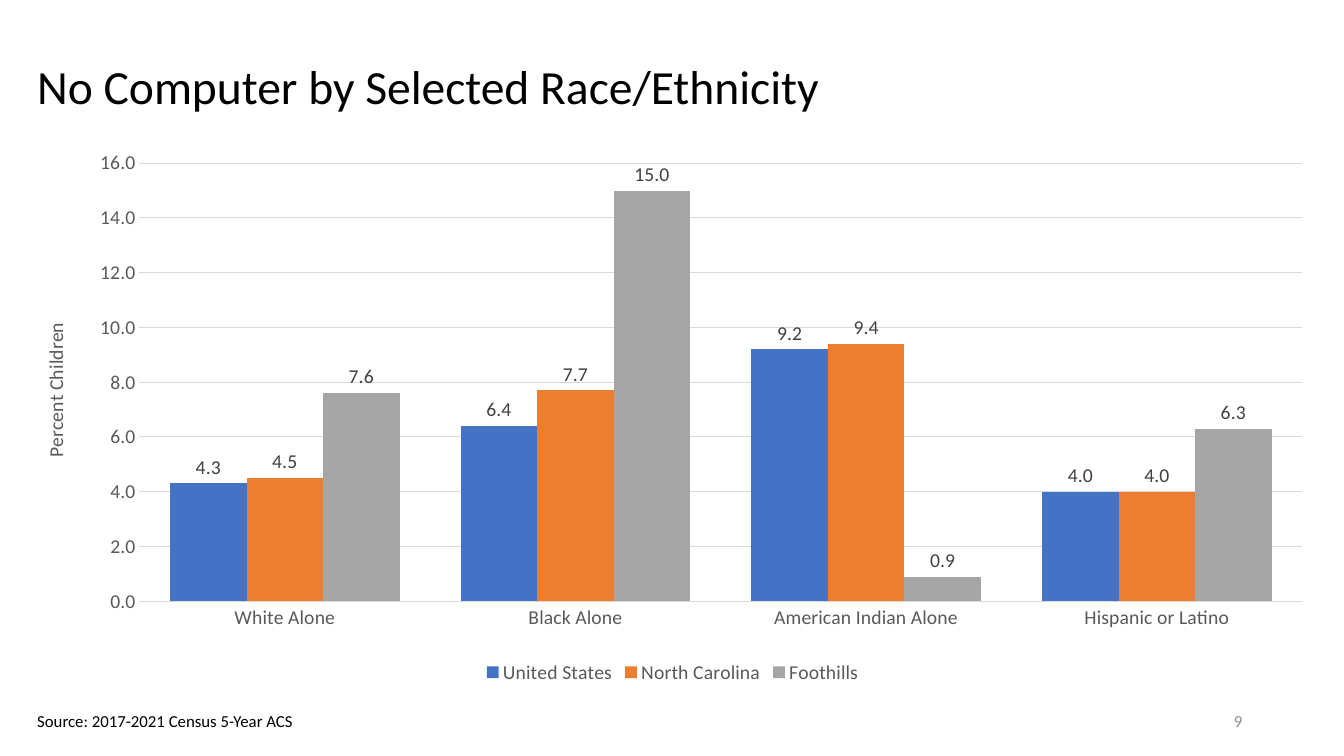
from lxml import etree
from pptx import Presentation
from pptx.chart.data import CategoryChartData
from pptx.dml.color import RGBColor
from pptx.enum.chart import XL_CHART_TYPE, XL_LABEL_POSITION, XL_LEGEND_POSITION, XL_TICK_MARK
from pptx.enum.text import MSO_ANCHOR, PP_ALIGN
from pptx.oxml.ns import qn
from pptx.util import Inches, Pt

FONT = "Calibri"
BLACK, GREY, PALE, DARK, MUTED = "000000", "595959", "D9D9D9", "404040", "8C8C8C"
MARGIN = 0.27
NUMBER_FORMAT = "#,##0.0"
RACES = ["White Alone", "Black Alone", "American Indian Alone", "Hispanic or Latino"]
REGIONS = [
    ("United States", "4472C4", (4.3, 6.4, 9.2, 4.0)),
    ("North Carolina", "ED7D31", (4.5, 7.7, 9.4, 4.0)),
    ("Foothills", "A5A5A5", (7.6, 15.0, 0.9, 6.3)),
]


def rgb(value):
    """Turn a hex string into a colour."""
    return RGBColor.from_string(value)


def style_font(font, size, color):
    """Set the typeface, size and colour of a font."""
    font.name, font.size, font.bold = FONT, Pt(size), False
    font.color.rgb = rgb(color)


def add_text(s, box, text, size, color=BLACK, anchor=MSO_ANCHOR.MIDDLE,
             align=PP_ALIGN.LEFT, wrap=True, spacing=None):
    """Place one line of text in a box."""
    tf = s.shapes.add_textbox(*map(Inches, box)).text_frame
    tf.word_wrap, tf.vertical_anchor = wrap, anchor
    p = tf.paragraphs[0]
    p.text, p.alignment, p.line_spacing = text, align, spacing
    style_font(p.font, size, color)


def set_plot_layout(chart, x, y, w, h):
    """Fix the inner plot area as shares of the chart."""
    plot_area = chart.plots[0]._element.getparent()
    for old in plot_area.findall(qn("c:layout")):
        plot_area.remove(old)
    layout = etree.Element(qn("c:layout"))
    manual = etree.SubElement(layout, qn("c:manualLayout"))
    settings = [("layoutTarget", "inner"), ("xMode", "edge"), ("yMode", "edge"),
                ("x", x), ("y", y), ("w", w), ("h", h)]
    for tag, value in settings:
        etree.SubElement(manual, qn(f"c:{tag}")).set("val", str(value))
    plot_area.insert(0, layout)


def style_axes(chart):
    """Format both axes, the gridlines and the value axis title."""
    category, value = chart.category_axis, chart.value_axis
    for axis in (category, value):
        axis.major_tick_mark = axis.minor_tick_mark = XL_TICK_MARK.NONE
        style_font(axis.tick_labels.font, 14, GREY)
    for line in (category.format.line, value.major_gridlines.format.line):
        line.color.rgb, line.width = rgb(PALE), Pt(0.75)
    value.format.line.fill.background()
    value.minimum_scale, value.maximum_scale, value.major_unit = 0, 16, 2
    value.tick_labels.number_format = NUMBER_FORMAT
    value.tick_labels.number_format_is_linked = False
    tf = value.axis_title.text_frame
    tf._txBody.bodyPr.set("rot", "-5400000")
    tf.text = "Percent Children"
    style_font(tf.paragraphs[0].font, 14, GREY)


def style_series(series, color):
    """Colour a series and label its columns."""
    series.format.fill.solid()
    series.format.fill.fore_color.rgb = rgb(color)
    series.invert_if_negative = False
    labels = series.data_labels
    labels.show_value, labels.position = True, XL_LABEL_POSITION.OUTSIDE_END
    labels.number_format, labels.number_format_is_linked = NUMBER_FORMAT, False
    style_font(labels.font, 14, DARK)


def add_race_chart(s, box):
    """Draw the clustered columns by race and region in a box."""
    data = CategoryChartData(number_format=NUMBER_FORMAT)
    data.categories = RACES
    for name, _, values in REGIONS:
        data.add_series(name, values)
    chart = s.shapes.add_chart(XL_CHART_TYPE.COLUMN_CLUSTERED, *map(Inches, box), data).chart
    style_font(chart.font, 14, BLACK)
    chart.has_title = False
    chart.has_legend = True
    chart.legend.position = XL_LEGEND_POSITION.BOTTOM
    chart.legend.include_in_layout = False
    style_font(chart.legend.font, 14, GREY)
    plot = chart.plots[0]
    plot.gap_width, plot.overlap, plot.vary_by_categories = 80, 0, False
    for series, (_, color, _) in zip(plot.series, REGIONS):
        style_series(series, color)
    style_axes(chart)
    set_plot_layout(chart, 0.087, 0.035, 0.901, 0.805)


def add_footer(s, top):
    """Place the source line and the slide number."""
    add_text(s, (MARGIN, top + 0.05, 2.78, 0.3), "Source: 2017-2021 Census 5-Year ACS", 12,
             anchor=MSO_ANCHOR.TOP, wrap=False)
    add_text(s, (9.42, top, 3, 0.4), "9", 12, MUTED, align=PP_ALIGN.RIGHT)


def main():
    """Build and save the slide."""
    prs = Presentation()
    prs.slide_width, prs.slide_height = Inches(13.33), Inches(7.5)
    s = prs.slides.add_slide(prs.slide_layouts[6])
    add_text(s, (MARGIN, 0.34, 12.76, 1.09), "No Computer by Selected Race/Ethnicity", 34,
             spacing=0.9)
    add_race_chart(s, (MARGIN, 1.43, 12.8, 5.4))
    add_footer(s, 6.95)
    prs.save("out.pptx")


if __name__ == "__main__":
    main()
